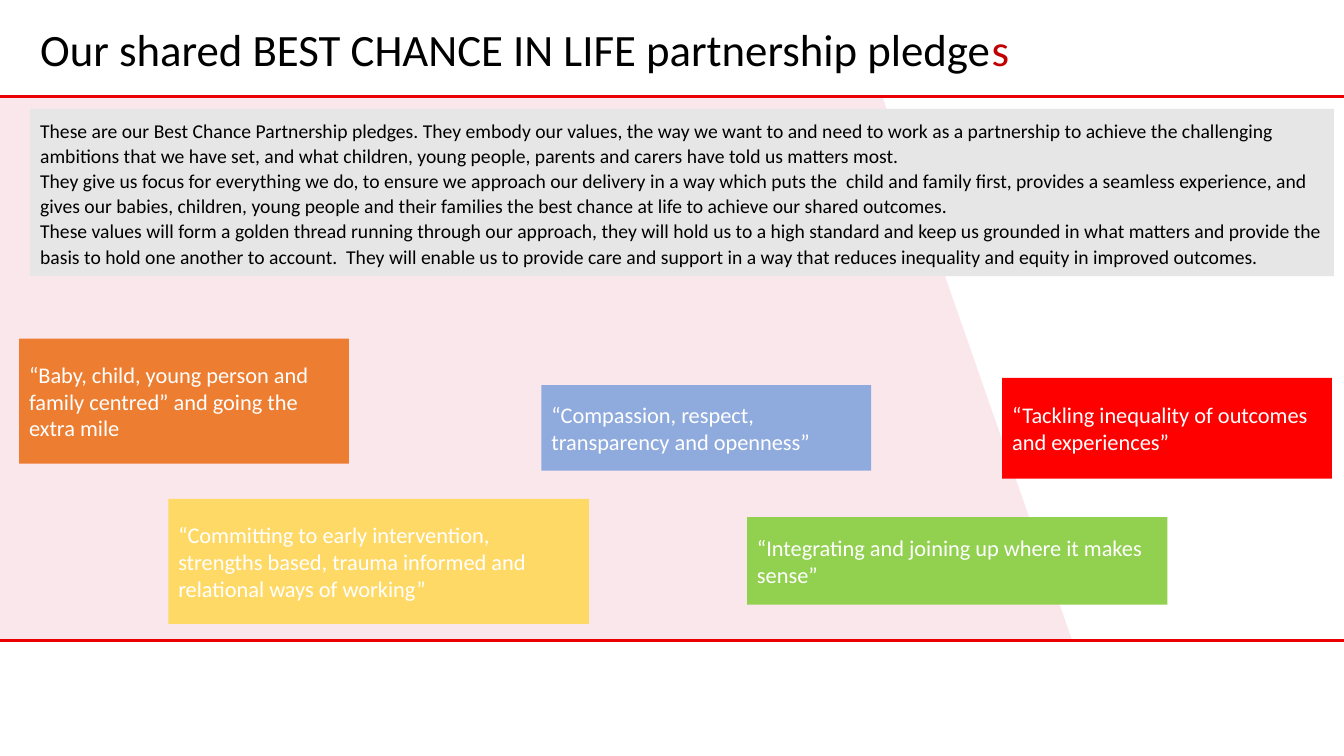
from lxml import etree
from pptx import Presentation
from pptx.dml.color import RGBColor
from pptx.enum.shapes import MSO_CONNECTOR, MSO_SHAPE
from pptx.enum.text import MSO_ANCHOR, PP_ALIGN
from pptx.oxml.ns import qn
from pptx.util import Inches, Pt

COLORS = {
    "black": "000000",
    "white": "FFFFFF",
    "accent": "C00000",
    "rule": "EA0000",
    "blush": "FAE7EC",
    "grey": "E6E6E6",
    "orange": "ED7D31",
    "yellow": "FFD966",
    "blue": "8FAADC",
    "green": "92D050",
    "red": "FF0000",
}
FONT = "Calibri"
SLIDE_WIDTH, SLIDE_HEIGHT = 13.33, 7.5
BAND_TOP, BAND_HEIGHT = 0.96, 5.38

INTRODUCTION = [
    "These are our Best Chance Partnership pledges. They embody our values, the way we want to "
    "and need to work as a partnership to achieve the challenging ambitions that we have set, "
    "and what children, young people, parents and carers have told us matters most.",
    "They give us focus for everything we do, to ensure we approach our delivery in a way which "
    "puts the  child and family first, provides a seamless experience, and gives our babies, "
    "children, young people and their families the best chance at life to achieve our shared "
    "outcomes.",
    "These values will form a golden thread running through our approach, they will hold us to a "
    "high standard and keep us grounded in what matters and provide the basis to hold one another "
    "to account.  They will enable us to provide care and support in a way that reduces "
    "inequality and equity in improved outcomes.",
]

NARROW, WIDE = 3.27, 4.17
PLEDGES = [
    ("“Baby, child, young person and family centred” and going the extra mile",
     "orange", (0.19, 3.36, NARROW, 1.24)),
    ("“Committing to early intervention, strengths based, trauma informed and relational ways "
     "of working”", "yellow", (1.67, 4.95, WIDE, 1.24)),
    ("“Compassion, respect, transparency and openness”",
     "blue", (5.37, 3.82, NARROW, 0.85)),
    ("“Integrating and joining up where it makes sense”",
     "green", (7.41, 5.13, WIDE, 0.87)),
    ("“Tackling inequality of outcomes and experiences”",
     "red", (9.94, 3.75, NARROW, 1)),
]


def rgb(name):
    return RGBColor.from_string(COLORS[name])


def add_filled_shape(slide, kind, box, color):
    shape = slide.shapes.add_shape(kind, *map(Inches, box))
    shape.shadow.inherit = False
    shape.fill.solid()
    shape.fill.fore_color.rgb = rgb(color)
    shape.line.fill.background()
    return shape


def write_text(shape, paragraphs, size, anchor, line_spacing=None):
    frame = shape.text_frame
    frame.word_wrap = True
    frame.vertical_anchor = anchor
    for index, runs in enumerate(paragraphs):
        paragraph = frame.add_paragraph() if index else frame.paragraphs[0]
        paragraph.alignment = PP_ALIGN.LEFT
        paragraph.line_spacing = line_spacing
        for text, color in runs:
            run = paragraph.add_run()
            run.text = text
            run.font.name = FONT
            run.font.size = Pt(size)
            run.font.color.rgb = rgb(color)


def add_rule(slide, left, top, width):
    rule = slide.shapes.add_connector(
        MSO_CONNECTOR.STRAIGHT,
        Inches(left), Inches(top), Inches(left + width), Inches(top))
    rule.line.color.rgb = rgb("rule")
    rule.line.width = Pt(2.25)
    etree.SubElement(rule._element.spPr, qn("a:effectLst"))


def add_band(slide, left, top, width, height):
    slant_left = left + 2.16
    slant = add_filled_shape(
        slide, MSO_SHAPE.PARALLELOGRAM, (slant_left, top, 8.47, height), "blush")
    slant.adjustments[0] = 0.349
    slant._element.spPr.xfrm.set("flipH", "1")
    add_filled_shape(slide, MSO_SHAPE.RECTANGLE, (left, top, 5.37, height), "blush")
    for rule_top in (top, top + height + 0.01):
        add_rule(slide, left, rule_top, width)


def add_title(slide, left, top, width, height):
    title = slide.shapes.add_textbox(*map(Inches, (left, top, width, height)))
    runs = [("Our shared BEST CHANCE IN LIFE partnership pledge", "black"), ("s", "accent")]
    write_text(title, [runs], 32, MSO_ANCHOR.BOTTOM, 0.9)


def add_introduction(slide, left, top, width, height):
    panel = add_filled_shape(slide, MSO_SHAPE.RECTANGLE, (left, top, width, height), "grey")
    paragraphs = [[(text, "black")] for text in INTRODUCTION]
    write_text(panel, paragraphs, 14, MSO_ANCHOR.MIDDLE, 1.07)


def add_pledge(slide, text, color, box):
    card = add_filled_shape(slide, MSO_SHAPE.RECTANGLE, box, color)
    write_text(card, [[(text, "white")]], 16, MSO_ANCHOR.MIDDLE)


def main():
    presentation = Presentation()
    presentation.slide_width = Inches(SLIDE_WIDTH)
    presentation.slide_height = Inches(SLIDE_HEIGHT)
    slide = presentation.slides.add_slide(presentation.slide_layouts[6])
    add_band(slide, 0, BAND_TOP, SLIDE_WIDTH, BAND_HEIGHT)
    add_title(slide, 0.3, 0.2, 12.76, 0.61)
    add_introduction(slide, 0.3, 1.08, 12.93, 1.66)
    for text, color, box in PLEDGES:
        add_pledge(slide, text, color, box)
    presentation.save("out.pptx")


if __name__ == "__main__":
    main()
